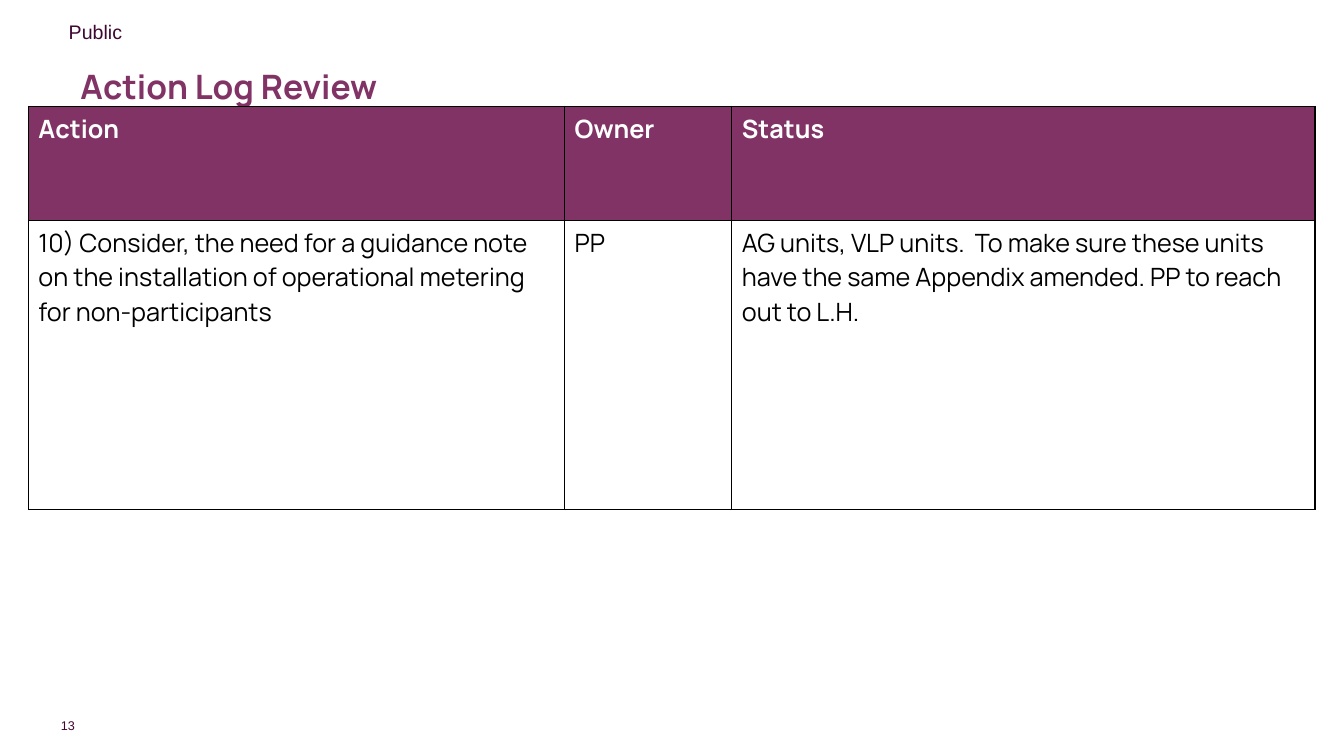
from lxml.etree import SubElement
from pptx import Presentation
from pptx.dml.color import RGBColor
from pptx.enum.text import MSO_ANCHOR as Anchor, PP_ALIGN as Align
from pptx.oxml.ns import qn
from pptx.util import Pt

PLUM, DARK, WHITE, BLACK = "813366", "3F0731", "FFFFFF", "000000"


def write(tf, text, **style):
    """Put text in the first paragraph and return that paragraph."""
    p = tf.paragraphs[0]
    r = p.add_run()
    r.text = text
    r.font.color.rgb = RGBColor.from_string(style.pop("color"))
    for name, value in style.items():
        setattr(r.font, name, value)
    return p


def border(cell, color, width):
    tc_pr = cell._tc.get_or_add_tcPr()
    for i, side in enumerate(("lnL", "lnR", "lnT", "lnB")):
        ln = SubElement(tc_pr, qn(f"a:{side}"), w=str(Pt(width)))
        tc_pr.insert(i, ln)
        SubElement(SubElement(ln, qn("a:solidFill")), qn("a:srgbClr"), val=color)


prs = Presentation()
prs.slide_width, prs.slide_height = Pt(960), Pt(540)
s = prs.slides.add_slide(prs.slide_layouts[6])

# Page number, classification and title
page = s.shapes.add_textbox(Pt(42.5), Pt(512.6), Pt(11), Pt(10.8)).text_frame
for side in ("left", "right", "top", "bottom"):
    setattr(page, f"margin_{side}", 0)
page.word_wrap = False
page.vertical_anchor = Anchor.MIDDLE
write(page, "13", size=Pt(9), name="Arial", color=DARK).alignment = Align.RIGHT

label = s.shapes.add_textbox(Pt(42), Pt(11), Pt(360), Pt(24.5)).text_frame
label.word_wrap = True
write(label, "Public", size=Pt(14), name="Arial", color=DARK)

title = s.shapes.add_textbox(Pt(50.4), Pt(28.8), Pt(764.6), Pt(68.4)).text_frame
title.word_wrap = True
title.vertical_anchor = Anchor.MIDDLE
p = write(title, "Action Log Review", size=Pt(24), name="Manrope", bold=True, color=PLUM)
p.line_spacing = 0.9

# Action log
rows = [
    ("Action", "Owner", "Status"),
    ("10) Consider, the need for a guidance note on the installation of "
     "operational metering for non-participants",
     "PP",
     "AG units, VLP units.  To make sure these units have the same Appendix "
     "amended. PP to reach out to L.H."),
]
widths, heights = (383, 119.5, 416.5), (81.5, 206.5)
table = s.shapes.add_table(len(rows), len(widths), Pt(20.3), Pt(76),
                           Pt(sum(widths)), Pt(sum(heights))).table
table.horz_banding = False
for column, width in zip(table.columns, widths):
    column.width = Pt(width)
for i, (texts, height) in enumerate(zip(rows, heights)):
    header = i == 0
    table.rows[i].height = Pt(height)
    for j, text in enumerate(texts):
        cell = table.cell(i, j)
        if header:
            cell.fill.solid()
            cell.fill.fore_color.rgb = RGBColor.from_string(PLUM)
        else:
            cell.fill.background()
        border(cell, BLACK, 1)
        write(cell.text_frame, text, size=Pt(18), name="Manrope", bold=header,
              color=WHITE if header else BLACK)

prs.save("out.pptx")
